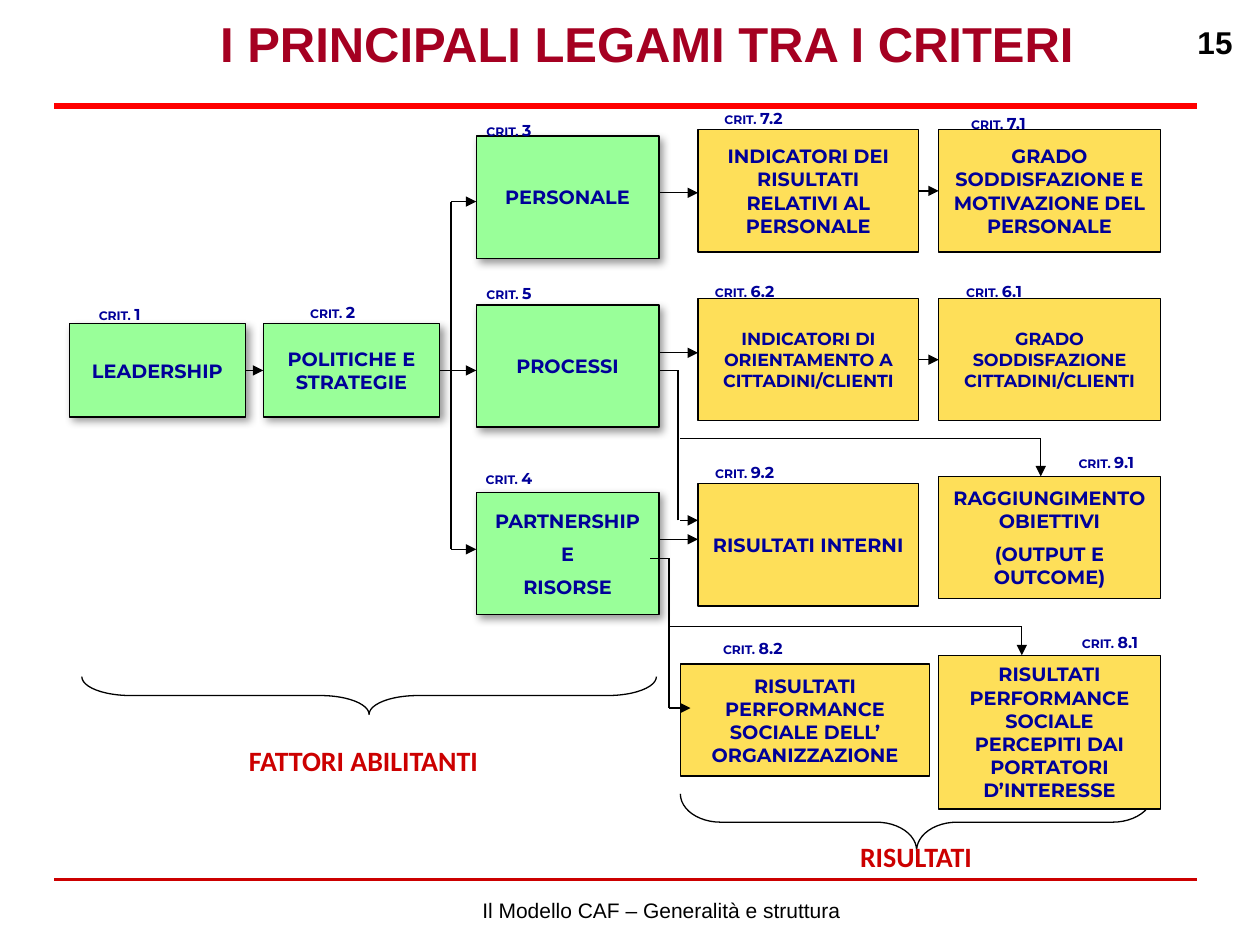
from lxml import etree
from pptx import Presentation
from pptx.dml.color import RGBColor
from pptx.enum.shapes import MSO_CONNECTOR, MSO_SHAPE
from pptx.enum.text import MSO_ANCHOR, PP_ALIGN
from pptx.oxml.ns import qn
from pptx.util import Inches, Pt

STRAIGHT = MSO_CONNECTOR.STRAIGHT
RECT, BRACE = MSO_SHAPE.RECTANGLE, MSO_SHAPE.LEFT_BRACE
TOP, MIDDLE, BOTTOM = MSO_ANCHOR.TOP, MSO_ANCHOR.MIDDLE, MSO_ANCHOR.BOTTOM
CENTER, RIGHT = PP_ALIGN.CENTER, PP_ALIGN.RIGHT

COLORS = {"title": "A50021", "rule": "FF0000", "red": "CC0000", "navy": "000099",
          "black": "000000", "green": "99FF99", "yellow": "FEDF59"}
TITLE = "I PRINCIPALI LEGAMI TRA I CRITERI"
COLUMNS = {"lead": (0.55, 1.4), "policy": (2.09, 1.4), "enabler": (3.78, 1.45),
           "measure": (5.54, 1.75), "wide": (5.4, 1.98), "result": (7.45, 1.76)}
ROW_H, LABEL_H = 0.97, 0.24

# criterion: column, top, height, fill, size, paragraphs, space before
BOXES = {
    "1": ("lead", 2.57, 0.74, "green", 11, ["LEADERSHIP"], 0),
    "2": ("policy", 2.57, 0.74, "green", 11, ["POLITICHE E STRATEGIE"], 0),
    "3": ("enabler", 1.08, ROW_H, "green", 11, ["PERSONALE"], 0),
    "5": ("enabler", 2.42, ROW_H, "green", 11, ["PROCESSI"], 0),
    "4": ("enabler", 3.91, ROW_H, "green", 11, ["PARTNERSHIP", "E", "RISORSE"], 5.5),
    "7.2": ("measure", 1.03, ROW_H, "yellow", 11,
            ["INDICATORI DEI RISULTATI RELATIVI AL PERSONALE"], 0),
    "6.2": ("measure", 2.37, ROW_H, "yellow", 10,
            ["INDICATORI DI ORIENTAMENTO A CITTADINI/CLIENTI"], 0),
    "9.2": ("measure", 3.84, ROW_H, "yellow", 11, ["RISULTATI INTERNI"], 0),
    "8.2": ("wide", 5.27, 0.89, "yellow", 11,
            ["RISULTATI PERFORMANCE SOCIALE DELL’", "ORGANIZZAZIONE"], 0),
    "7.1": ("result", 1.03, ROW_H, "yellow", 11,
            ["GRADO SODDISFAZIONE E MOTIVAZIONE DEL PERSONALE"], 0),
    "6.1": ("result", 2.37, ROW_H, "yellow", 10,
            ["GRADO SODDISFAZIONE CITTADINI/CLIENTI"], 0),
    "9.1": ("result", 3.78, ROW_H, "yellow", 11,
            ["RAGGIUNGIMENTO OBIETTIVI", "(OUTPUT E OUTCOME)"], 5.5),
    "8.1": ("result", 5.2, 1.22, "yellow", 11,
            ["RISULTATI PERFORMANCE SOCIALE PERCEPITI DAI PORTATORI D’INTERESSE"], 0),
}
LABELS = {"1": (0.62, 2.37, 0.66), "2": (2.31, 2.35, 0.66), "3": (3.71, 0.91, 0.66),
          "5": (3.71, 2.2, 0.66), "4": (3.71, 3.67, 0.66), "7.2": (5.54, 0.81, 0.88),
          "6.2": (5.47, 2.19, 0.88), "9.2": (5.47, 3.62, 0.88), "8.2": (5.47, 5.02, 1.01),
          "7.1": (7.45, 0.85, 0.95), "6.1": (7.45, 2.19, 0.88), "9.1": (8.34, 3.54, 0.88),
          "8.1": (8.36, 4.97, 0.9)}
JOINED = [("1", "2"), ("7.2", "7.1"), ("6.2", "6.1")]
ARROWS = [(3.58, 1.6, 3.78, 1.6), (3.49, 2.94, 3.78, 2.94), (3.58, 4.36, 3.78, 4.36),
          (5.23, 1.53, 5.54, 1.53), (5.23, 2.8, 5.54, 2.8), (5.4, 4.13, 5.54, 4.13),
          (5.23, 4.28, 5.54, 4.28), (5.31, 5.62, 5.48, 5.62),
          (8.26, 3.48, 8.26, 3.78), (8.11, 4.97, 8.11, 5.2)]
LINES = [(3.58, 1.6, 3.58, 4.36), (5.38, 2.94, 5.23, 2.94), (5.38, 4.13, 5.38, 2.94),
         (5.3, 4.43, 5.16, 4.43), (5.31, 5.62, 5.31, 4.43),
         (8.26, 3.48, 5.4, 3.48), (8.11, 4.97, 5.31, 4.97)]
RULES = [(0.84, "rule", 3.5), (6.98, "red", 1.5)]
BRACES = [(2.78, 3.24, 0.3, 4.56, 1.29), (7.05, 4.65, 0.45, 3.75, 0.71)]
GROUPS = [("FATTORI ABILITANTI", 1.27, 5.86, 3.23), ("RISULTATI", 5.91, 6.62, 2.72)]


def rgb(name):
    return RGBColor.from_string(COLORS[name])


def write(sp, paragraphs, font, color, bold=True, anchor=MIDDLE, align=CENTER,
          inset=(0.09, 0.04), before=0):
    tf = sp.text_frame
    tf.word_wrap = True
    tf.vertical_anchor = anchor
    tf.margin_left = tf.margin_right = Inches(inset[0])
    tf.margin_top = tf.margin_bottom = Inches(inset[1])
    for i, runs in enumerate(paragraphs):
        p = tf.add_paragraph() if i else tf.paragraphs[0]
        p.alignment = align
        p.space_before = Pt(before if i else 0)
        for text, size in runs:
            r = p.add_run()
            r.text = text
            r.font.name, r.font.size, r.font.bold = font, Pt(size), bold
            r.font.color.rgb = rgb(color)


def textbox(slide, x, y, w, h, *args, **kwargs):
    sp = slide.shapes.add_textbox(*map(Inches, (x, y, w, h)))
    write(sp, *args, **kwargs)


def shape(slide, kind, x, y, w, h, fill=None):
    sp = slide.shapes.add_shape(kind, *map(Inches, (x, y, w, h)))
    sp.shadow.inherit = False
    if fill:
        sp.fill.solid()
        sp.fill.fore_color.rgb = rgb(fill)
    else:
        sp.fill.background()
    sp.line.color.rgb = rgb("black")
    sp.line.width = Pt(0.75)
    return sp


def add_shadow(sp):
    effects = sp._element.spPr.find(qn("a:effectLst"))
    shadow = etree.SubElement(effects, qn("a:outerShdw"), blurRad=str(Pt(5)),
                              dist=str(Pt(3)), dir=str(45 * 60000))
    color = etree.SubElement(shadow, qn("a:srgbClr"), val=COLORS["black"])
    etree.SubElement(color, qn("a:alpha"), val="40000")


def connect(slide, points, arrow=False, color="black", width=0.75):
    c = slide.shapes.add_connector(STRAIGHT, *map(Inches, points))
    c.line.color.rgb = rgb(color)
    c.line.width = Pt(width)
    if arrow:
        etree.SubElement(c.line._get_or_add_ln(), qn("a:tailEnd"), type="triangle")
    etree.SubElement(c._element.spPr, qn("a:effectLst"))
    return c


def main():
    prs = Presentation()
    prs.slide_width, prs.slide_height = Inches(10), Inches(7.5)
    slide = prs.slides.add_slide(prs.slide_layouts[5])

    title = slide.shapes.title
    title.left, title.top, title.width, title.height = map(Inches, (1.38, 0, 7.51, 0.68))
    write(title, [[(TITLE, 28)]], "Arial", "title", inset=(0.1, 0.05))
    textbox(slide, 9.33, 0.13, 0.55, 0.5, [[("15", 18)]], "Arial", "black",
            anchor=TOP, align=RIGHT, inset=(0.1, 0.05))
    textbox(slide, 2.98, 7.07, 4.54, 0.3, [[("Il Modello CAF – Generalità e struttura", 12)]],
            "Arial", "black", bold=False, inset=(0.1, 0.05))
    for y, color, width in RULES:
        connect(slide, (0.43, y, 9.5, y), color=color, width=width)

    for x, y, w, h, curve in BRACES:
        sp = shape(slide, BRACE, x, y, w, h)
        sp.rotation = 270
        sp.adjustments[0] = curve

    boxes = {}
    for crit, (col, top, height, fill, size, paragraphs, before) in BOXES.items():
        left, width = COLUMNS[col]
        sp = boxes[crit] = shape(slide, RECT, left, top, width, height, fill)
        if fill == "green":
            add_shadow(sp)
        write(sp, [[(text, size)] for text in paragraphs], "Montserrat", "navy", before=before)

    for crit, (x, y, w) in LABELS.items():
        textbox(slide, x, y, w, LABEL_H, [[("CRIT. ", 7), (crit, 9)]],
                "Montserrat", "navy", anchor=BOTTOM)
    for text, x, y, w in GROUPS:
        textbox(slide, x, y, w, 0.36, [[(text, 16)]], "Calibri", "red", anchor=TOP)

    for points in LINES:
        connect(slide, points)
    for points in ARROWS:
        connect(slide, points, arrow=True)
    for start, end in JOINED:
        c = connect(slide, (0, 0, 0, 0), arrow=True)
        c.begin_connect(boxes[start], 3)
        c.end_connect(boxes[end], 1)

    prs.save("out.pptx")


if __name__ == "__main__":
    main()
